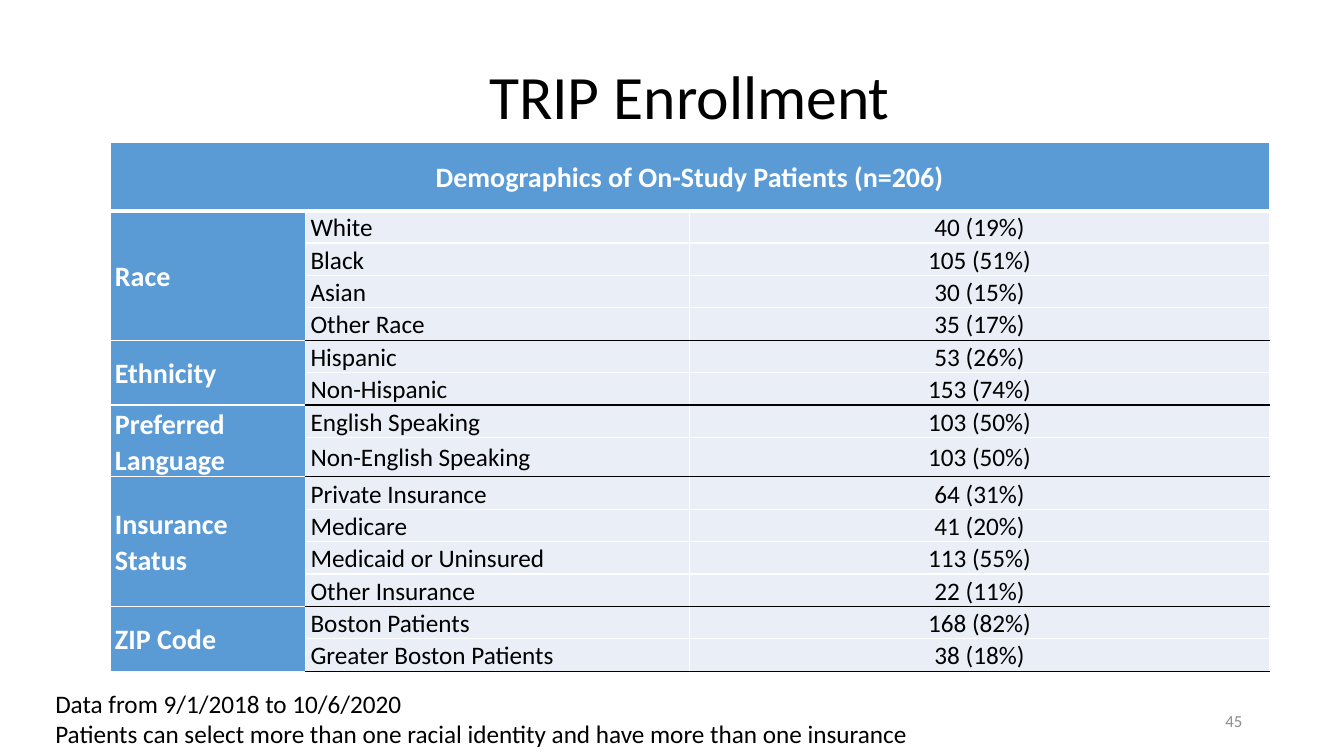
from dataclasses import dataclass

from lxml.etree import SubElement
from pptx import Presentation
from pptx.dml.color import RGBColor
from pptx.enum.text import MSO_ANCHOR as Anchor, PP_ALIGN as Align
from pptx.oxml.ns import qn
from pptx.slide import Slide
from pptx.table import Table, _Cell as Cell
from pptx.text.text import TextFrame
from pptx.util import Inches, Pt

WHITE, BLACK, GRAY = "FFFFFF", "000000", "8C8C8C"
BLUE, PALE_BLUE = "5B9BD5", "EAEFF7"
COLUMN_WIDTHS = (1.94, 3.81, 5.75)
HEADER_HEIGHT, ROW_HEIGHT = 0.68, 0.23


@dataclass
class TextStyle:
    size: float
    color: str = BLACK
    bold: bool = False
    align: Align = Align.LEFT
    line_spacing: float = 1.0
    space_after: float = 0


@dataclass
class Group:
    name: str
    rows: list[tuple[str, str]]


@dataclass
class Label:
    text: str
    box: tuple[float, float, float, float]
    style: TextStyle
    anchor: Anchor = Anchor.MIDDLE


GROUPS = [
    Group("Race", [("White", "40 (19%)"), ("Black", "105 (51%)"),
                   ("Asian", "30 (15%)"), ("Other Race", "35 (17%)")]),
    Group("Ethnicity", [("Hispanic", "53 (26%)"), ("Non-Hispanic", "153 (74%)")]),
    Group("Preferred Language", [("English Speaking", "103 (50%)"),
                                 ("Non-English Speaking", "103 (50%)")]),
    Group("Insurance Status", [("Private Insurance", "64 (31%)"), ("Medicare", "41 (20%)"),
                               ("Medicaid or Uninsured", "113 (55%)"),
                               ("Other Insurance", "22 (11%)")]),
    Group("ZIP Code", [("Boston Patients", "168 (82%)"),
                       ("Greater Boston Patients", "38 (18%)")]),
]

LABELS = [
    Label("TRIP Enrollment", (1.09, 0.26, 11.5, 1.45),
          TextStyle(44, align=Align.CENTER, line_spacing=0.9)),
    Label("Data from 9/1/2018 to 10/6/2020\n"
          "Patients can select more than one racial identity and have more than one insurance",
          (0.45, 6.78, 12.43, 0.71), TextStyle(18), Anchor.TOP),
    Label("45", (9.42, 6.95, 3, 0.4), TextStyle(12, GRAY, align=Align.RIGHT)),
]

HEADER = TextStyle(20, WHITE, True, Align.CENTER, 1.07, 1.9)
CATEGORY = TextStyle(20, WHITE, True, Align.LEFT, 1.07, 1.9)
ITEM = TextStyle(18, BLACK, False, Align.LEFT, 1.07, 1.9)
COUNT = TextStyle(18, BLACK, False, Align.CENTER, 1.07, 1.9)


def rgb(color: str) -> RGBColor:
    return RGBColor.from_string(color)


def write(frame: TextFrame, text: str, style: TextStyle) -> None:
    frame.text = text
    for paragraph in frame.paragraphs:
        paragraph.alignment = style.align
        paragraph.line_spacing = style.line_spacing
        paragraph.space_after = Pt(style.space_after)
        for run in paragraph.runs:
            run.font.name = "Calibri"
            run.font.size = Pt(style.size)
            run.font.bold = style.bold
            run.font.color.rgb = rgb(style.color)


def add_label(slide: Slide, label: Label) -> None:
    shape = slide.shapes.add_textbox(*map(Inches, label.box))
    shape.text_frame.word_wrap = True
    shape.text_frame.vertical_anchor = label.anchor
    write(shape.text_frame, label.text, label.style)


def style_cell(cell: Cell, fill: str, side_margin: float = 0.05,
               top: str = WHITE, bottom: str = WHITE, bottom_width: float = 1) -> None:
    cell.vertical_anchor = Anchor.MIDDLE
    cell.margin_left = cell.margin_right = Inches(side_margin)
    cell.margin_top = cell.margin_bottom = 0
    # Borders come before the fill in the cell properties
    properties = cell._tc.get_or_add_tcPr()
    for side, color, width in (("L", WHITE, 1), ("R", WHITE, 1),
                               ("T", top, 1), ("B", bottom, bottom_width)):
        line = SubElement(properties, qn(f"a:ln{side}"), w=str(Pt(width)))
        SubElement(SubElement(line, qn("a:solidFill")), qn("a:srgbClr"), val=color)
    cell.fill.solid()
    cell.fill.fore_color.rgb = rgb(fill)


def fill_group(table: Table, group: Group, first: int) -> None:
    last = first + len(group.rows) - 1
    for index, (item, count) in enumerate(group.rows, first):
        # Black rules separate the groups
        top = BLACK if index == first and first > 1 else WHITE
        bottom = BLACK if index == last else WHITE
        style_cell(table.cell(index, 0), BLUE)
        for column, text, style, margin in ((1, item, ITEM, 0.05), (2, count, COUNT, 0.03)):
            cell = table.cell(index, column)
            style_cell(cell, PALE_BLUE, margin, top, bottom)
            write(cell.text_frame, text, style)
    category = table.cell(first, 0)
    category.merge(table.cell(last, 0))
    write(category.text_frame, group.name, CATEGORY)


def add_demographics(slide: Slide) -> None:
    row_count = 1 + sum(len(group.rows) for group in GROUPS)
    shape = slide.shapes.add_table(row_count, len(COLUMN_WIDTHS), Inches(1.09), Inches(1.41),
                                   Inches(sum(COLUMN_WIDTHS)), Inches(5.25))
    table = shape.table
    for column, width in zip(table.columns, COLUMN_WIDTHS):
        column.width = Inches(width)
    for index, row in enumerate(table.rows):
        row.height = Inches(ROW_HEIGHT if index else HEADER_HEIGHT)
    shape.height = Inches(5.25)

    # Header across all columns
    for cell in table.rows[0].cells:
        style_cell(cell, BLUE, bottom_width=3)
    header = table.cell(0, 0)
    header.merge(table.cell(0, len(COLUMN_WIDTHS) - 1))
    write(header.text_frame, "Demographics of On-Study Patients (n=206)", HEADER)

    # Patient groups
    first = 1
    for group in GROUPS:
        fill_group(table, group, first)
        first += len(group.rows)


def main() -> None:
    presentation = Presentation()
    presentation.slide_width, presentation.slide_height = Inches(13.33), Inches(7.5)
    slide = presentation.slides.add_slide(presentation.slide_layouts[6])
    title, *footers = LABELS
    add_label(slide, title)
    add_demographics(slide)
    for footer in footers:
        add_label(slide, footer)
    presentation.save("out.pptx")


if __name__ == "__main__":
    main()
